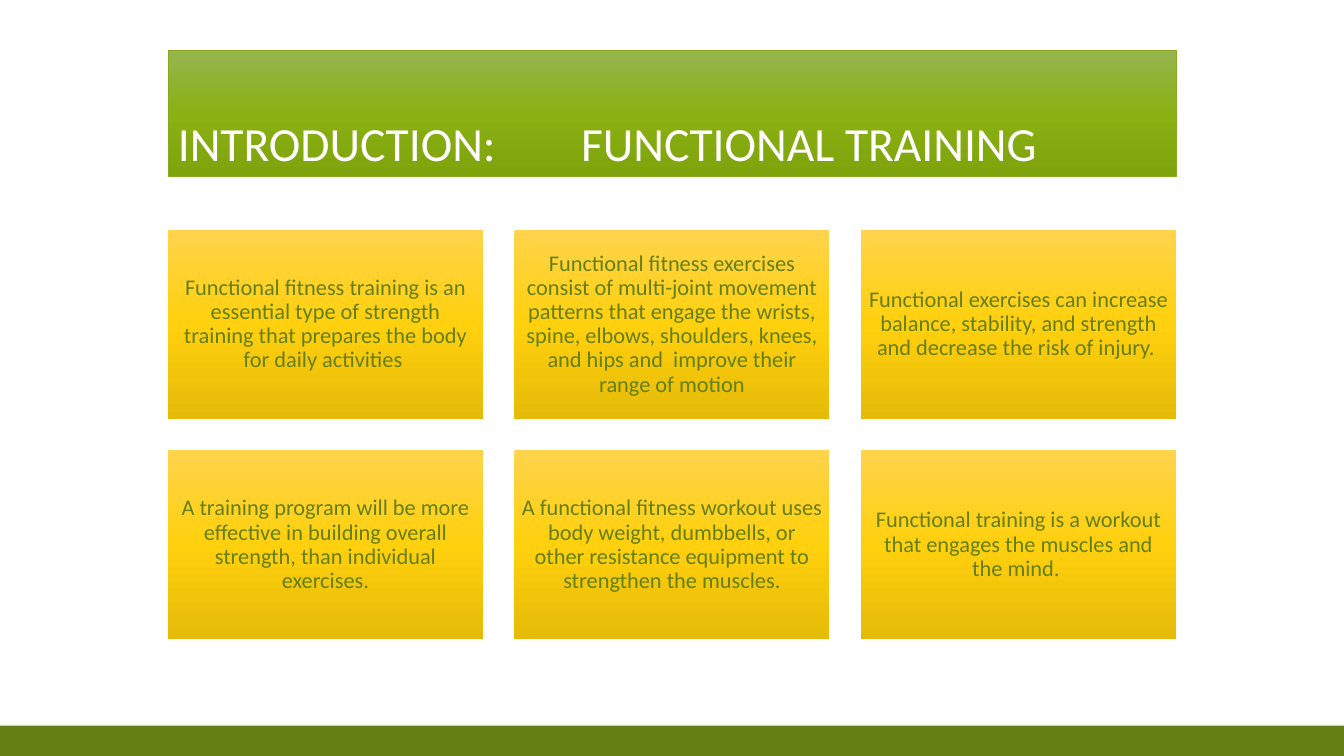
from lxml import etree
from pptx import Presentation
from pptx.dml.color import RGBColor
from pptx.enum.shapes import MSO_SHAPE
from pptx.enum.text import MSO_ANCHOR, PP_ALIGN
from pptx.oxml.ns import qn
from pptx.util import Pt

RECT = MSO_SHAPE.RECTANGLE
LEFT, CENTER = PP_ALIGN.LEFT, PP_ALIGN.CENTER
BOTTOM, MIDDLE = MSO_ANCHOR.BOTTOM, MSO_ANCHOR.MIDDLE

TITLE = "INTRODUCTION:\tFUNCTIONAL TRAINING"
CARDS = [
    "Functional fitness training is an essential type of strength training that prepares the body for daily activities ",
    "Functional fitness exercises consist of multi-joint movement patterns that engage the wrists, spine, elbows, "
    "shoulders, knees, and hips and  improve their range of motion",
    "Functional exercises can increase balance, stability, and strength and decrease the risk of injury. ",
    "A training program will be more effective in building overall strength, than individual exercises.",
    "A functional fitness workout uses body weight, dumbbells, or other resistance equipment to strengthen the muscles.",
    "Functional training is a workout that engages the muscles and the mind. ",
]

THEME = {
    "font": "Calibri",
    "green": "657F14",
    "edge": "87A91B",
    "white": "FFFFFF",
    "title_fill": ["95B54E", "8BB014", "7FA30B"],
    "card_fill": ["FFD44C", "FFD00D", "E5BB09"],
    "title_size": 34,
    "card_size": 16,
}

WIDE, HIGH = 960, 540
BAR_H = 21.6
MARGIN, SPAN = 120, 720
TITLE_TOP, TITLE_H, TITLE_TAB = 36, 90, 288
COLS, CARD_W, CARD_H = 3, 225, 135
GRID_TOP = 164.2
GAP = (SPAN - COLS * CARD_W) / (COLS - 1)

TITLE_FRAME = {"vertical_anchor": BOTTOM}
CARD_FRAME = {"vertical_anchor": MIDDLE, **{
    "margin_" + side: Pt(5) for side in ("left", "top", "right", "bottom")}}


def set_all(item, values):
    for name, value in values.items():
        setattr(item, name, value)


def add_box(slide, left, top, width, height):
    box = slide.shapes.add_shape(RECT, Pt(left), Pt(top), Pt(width), Pt(height))
    box.shadow.inherit = False
    box.line.fill.background()
    return box


def shade(box, colors):
    """Fill from top to bottom with evenly spaced colour stops."""
    box.fill.gradient()
    box.fill.gradient_angle = 270
    stops = box._element.spPr.find(qn("a:gradFill")).find(qn("a:gsLst"))
    stops.clear()
    for i, color in enumerate(colors):
        place = str(100000 * i // (len(colors) - 1))
        stop = etree.SubElement(stops, qn("a:gs"), pos=place)
        etree.SubElement(stop, qn("a:srgbClr"), val=color)


def write(box, text, size, color, align, frame):
    body = box.text_frame
    set_all(body, {"word_wrap": True, **frame})
    para = body.paragraphs[0]
    set_all(para, {"alignment": align, "line_spacing": 0.9})
    run = para.add_run()
    run.text = text
    set_all(run.font, {"name": THEME["font"], "size": Pt(size)})
    run.font.color.rgb = RGBColor.from_string(color)
    return para


def add_title(slide):
    box = add_box(slide, MARGIN, TITLE_TOP, SPAN, TITLE_H)
    shade(box, THEME["title_fill"])
    box.line.color.rgb = RGBColor.from_string(THEME["edge"])
    box.line.width = Pt(0.5)
    para = write(box, TITLE, THEME["title_size"], THEME["white"], LEFT, TITLE_FRAME)
    tabs = etree.SubElement(para._p.get_or_add_pPr(), qn("a:tabLst"))
    etree.SubElement(tabs, qn("a:tab"), pos=str(Pt(TITLE_TAB)), algn="l")


def add_cards(slide):
    for i, text in enumerate(CARDS):
        row, col = divmod(i, COLS)
        left = MARGIN + col * (CARD_W + GAP)
        top = GRID_TOP + row * (CARD_H + GAP)
        box = add_box(slide, left, top, CARD_W, CARD_H)
        shade(box, THEME["card_fill"])
        write(box, text, THEME["card_size"], THEME["green"], CENTER, CARD_FRAME)


def main():
    deck = Presentation()
    set_all(deck, {"slide_width": Pt(WIDE), "slide_height": Pt(HIGH)})
    slide = deck.slides.add_slide(deck.slide_layouts[6])
    bar = add_box(slide, 0, HIGH - BAR_H, WIDE, BAR_H)
    bar.fill.solid()
    bar.fill.fore_color.rgb = RGBColor.from_string(THEME["green"])
    add_title(slide)
    add_cards(slide)
    deck.save("out.pptx")


if __name__ == "__main__":
    main()
